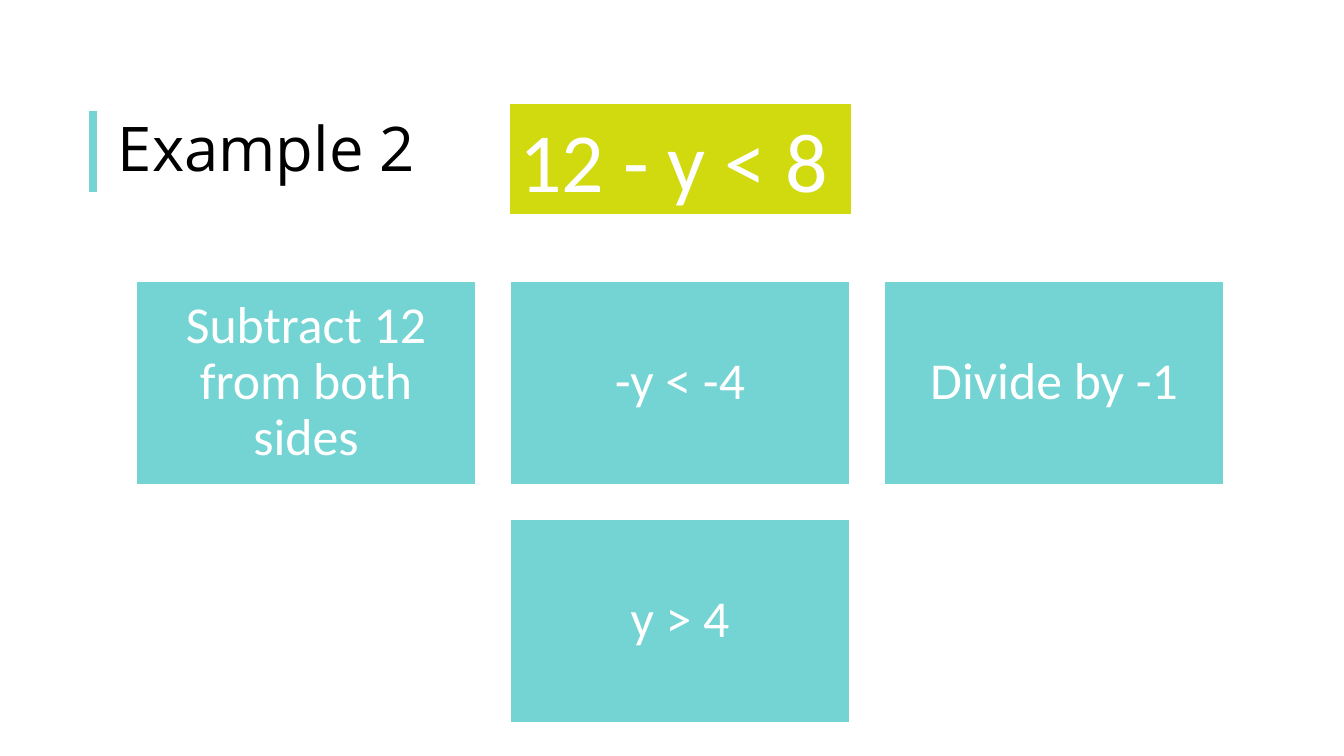
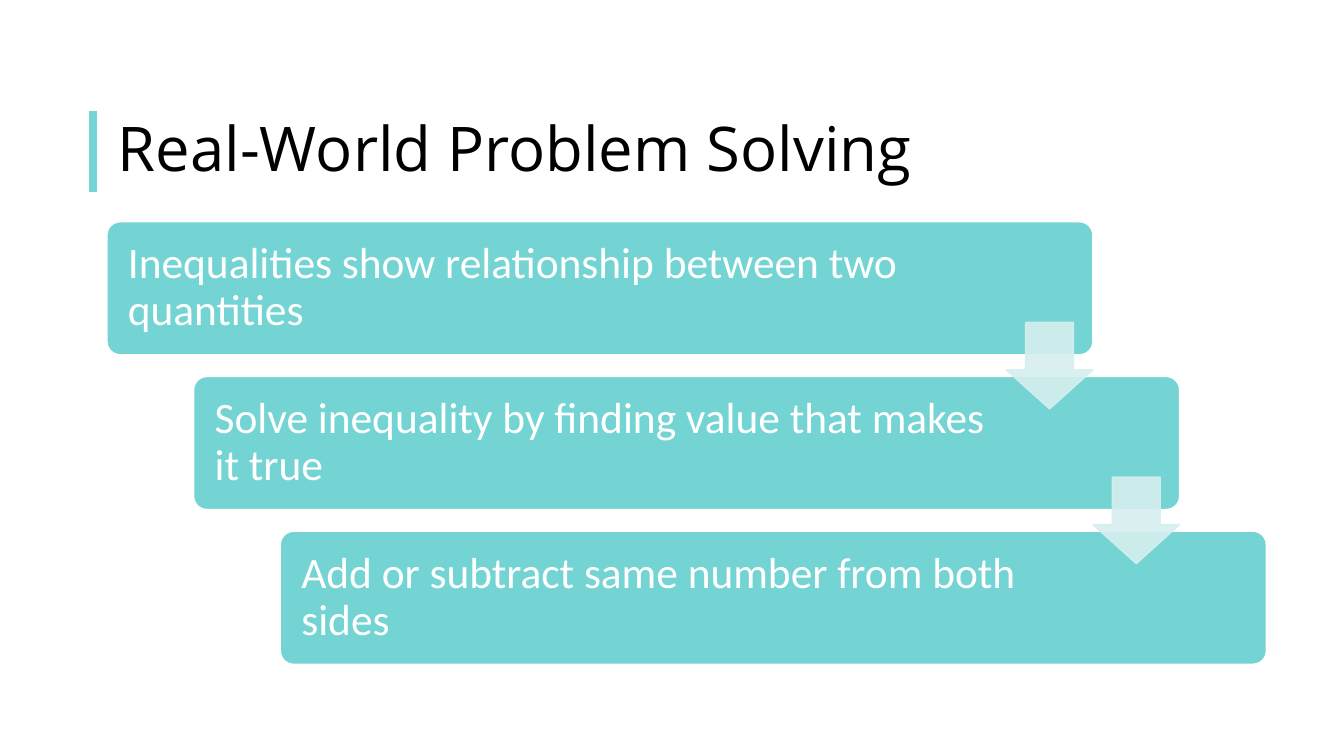
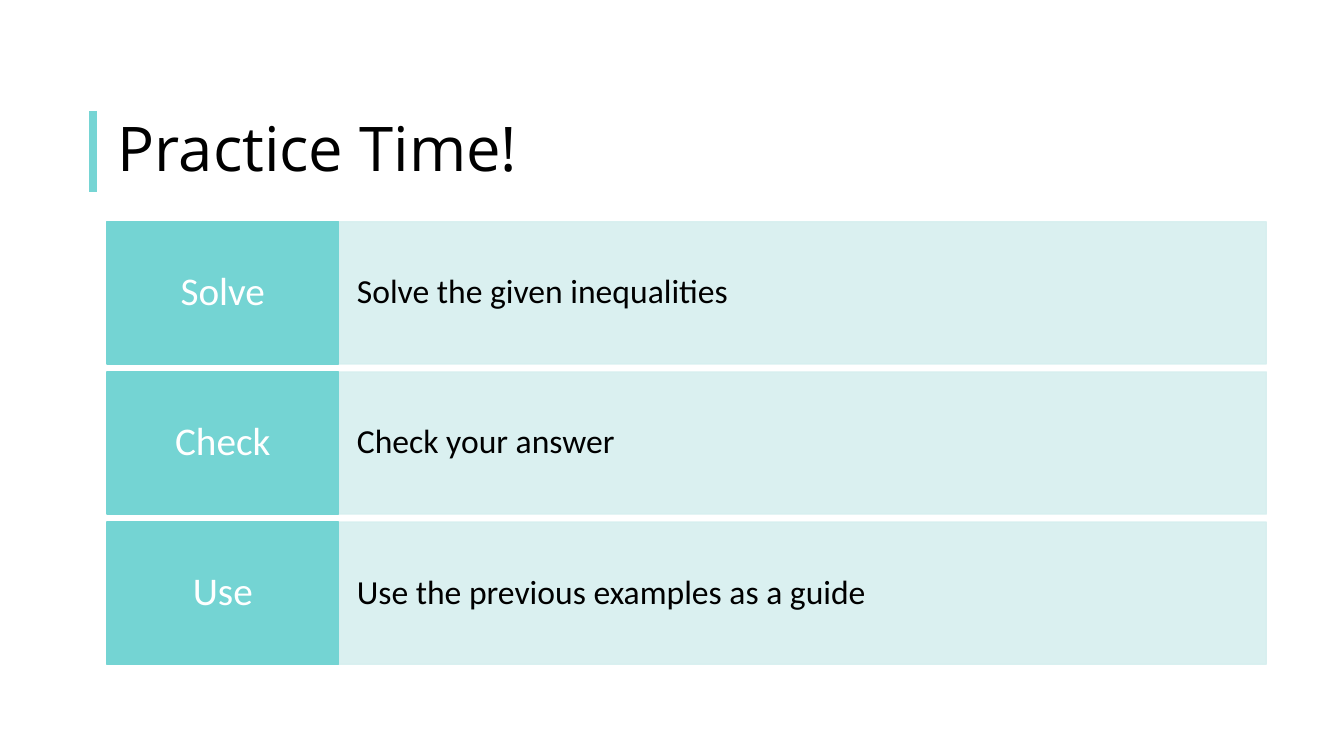
from dataclasses import dataclass

from lxml import etree
from pptx import Presentation
from pptx.dml.color import RGBColor
from pptx.enum.shapes import MSO_CONNECTOR, MSO_SHAPE
from pptx.enum.text import MSO_ANCHOR, PP_ALIGN
from pptx.oxml.ns import qn
from pptx.util import Inches, Pt

RECT = MSO_SHAPE.RECTANGLE
ROUNDED = MSO_SHAPE.ROUNDED_RECTANGLE
DOWN_ARROW = MSO_SHAPE.DOWN_ARROW
STRAIGHT = MSO_CONNECTOR.STRAIGHT
MIDDLE = MSO_ANCHOR.MIDDLE
LEFT = PP_ALIGN.LEFT
CENTER = PP_ALIGN.CENTER


@dataclass(frozen=True)
class Theme:
    white: str = "FFFFFF"
    black: str = "000000"
    title_bar: str = "76D5D4"
    teal: str = "74D4D3"
    pale_teal: str = "D6EFEF"
    lime: str = "D1DA0E"
    pale_opacity: int = 90
    title_font: str = "Open Sans"
    body_font: str = "Calibri"
    title_size: int = 44
    formula_size: int = 60
    step_size: int = 37
    stair_size: int = 31
    label_size: int = 28
    detail_size: int = 24


THEME = Theme()
CONTENT_LEFT, CONTENT_TOP = 1.06, 2.2
CONTENT_WIDTH, CONTENT_HEIGHT = 11.5, 4.39


def rgb(color):
    return RGBColor.from_string(color)


def set_opacity(fill_owner, percent):
    for color in fill_owner.iter(qn("a:srgbClr")):
        etree.SubElement(color, qn("a:alpha")).set("val", str(percent * 1000))


def write(box, text, size, color, font=THEME.body_font, align=LEFT,
          insets=(0.1, 0.05, 0.1, 0.05), spacing=0.9):
    frame = box.text_frame
    frame.word_wrap = True
    frame.vertical_anchor = MIDDLE
    (frame.margin_left, frame.margin_top,
     frame.margin_right, frame.margin_bottom) = map(Inches, insets)
    frame.text = text
    paragraph = frame.paragraphs[0]
    paragraph.alignment = align
    paragraph.line_spacing = spacing
    font_format = paragraph.runs[0].font
    font_format.name = font
    font_format.size = Pt(size)
    font_format.color.rgb = rgb(color)


def add_panel(slide, kind, bounds, fill, line, line_width=1,
              adjustments=(), opacity=None):
    panel = slide.shapes.add_shape(kind, *map(Inches, bounds))
    panel.shadow.inherit = False
    panel.fill.solid()
    panel.fill.fore_color.rgb = rgb(fill)
    panel.line.color.rgb = rgb(line)
    panel.line.width = Pt(line_width)
    for index, value in enumerate(adjustments):
        panel.adjustments[index] = value
    if opacity is not None:
        set_opacity(panel.fill._xPr, opacity)
    return panel


def add_titled_slide(deck, title):
    slide = deck.slides.add_slide(deck.slide_layouts[6])
    bar = slide.shapes.add_connector(
        STRAIGHT, Inches(0.92), Inches(1.1), Inches(0.92), Inches(1.9))
    bar.line.color.rgb = rgb(THEME.title_bar)
    bar.line.width = Pt(6)
    etree.SubElement(bar._element.spPr, qn("a:effectLst"))
    heading = slide.shapes.add_textbox(
        Inches(1.07), Inches(1.1), Inches(11.5), Inches(0.8))
    write(heading, title, THEME.title_size, THEME.black, THEME.title_font)
    return slide


def spread_tops(count, height):
    pitch = (CONTENT_HEIGHT - height) / (count - 1)
    return [CONTENT_TOP + index * pitch for index in range(count)]


def add_step_grid(slide, rows):
    left, top, width, height, gap = 1.35, 2.79, 3.37, 2.02, 0.34
    columns = max(map(len, rows))
    for row_index, steps in enumerate(rows):
        indent = (columns - len(steps)) * (width + gap) / 2
        for column, step in enumerate(steps):
            bounds = (left + indent + column * (width + gap),
                      top + row_index * (height + gap), width, height)
            card = add_panel(slide, RECT, bounds, THEME.teal, THEME.white, 1.5)
            write(card, step, THEME.step_size, THEME.white,
                  align=CENTER, insets=(0.15,) * 4)


def add_staircase(slide, steps):
    width, height, arrow_size = 9.78, 1.32, 0.86
    shift = (CONTENT_WIDTH - width) / (len(steps) - 1)
    tops = spread_tops(len(steps), height)
    lefts = [CONTENT_LEFT + index * shift for index in range(len(steps))]
    for left, top, (text, right_inset) in zip(lefts, tops, steps):
        stair = add_panel(slide, ROUNDED, (left, top, width, height),
                          THEME.teal, THEME.white, adjustments=(0.1,))
        write(stair, text, THEME.stair_size, THEME.white,
              insets=(0.17, 0.17, right_inset, 0.17))
    for left, top, next_top in zip(lefts, tops, tops[1:]):
        gap_center = (top + height + next_top) / 2
        bounds = (left + width - arrow_size, gap_center - arrow_size / 2,
                  arrow_size, arrow_size)
        add_panel(slide, DOWN_ARROW, bounds, THEME.pale_teal, THEME.pale_teal,
                  adjustments=(0.55, 0.45), opacity=THEME.pale_opacity)


def add_labelled_rows(slide, rows):
    label_width, height = 2.3, 1.41
    for top, (label, detail) in zip(spread_tops(len(rows), height), rows):
        detail_bounds = (CONTENT_LEFT + label_width, top,
                         CONTENT_WIDTH - label_width, height)
        detail_panel = add_panel(slide, RECT, detail_bounds, THEME.pale_teal,
                                 THEME.pale_teal, opacity=THEME.pale_opacity)
        write(detail_panel, detail, THEME.detail_size, THEME.black,
              insets=(0.18, 0.36, 0.18, 0.36))
        label_panel = add_panel(
            slide, RECT, (CONTENT_LEFT, top, label_width, height),
            THEME.teal, THEME.teal)
        write(label_panel, label, THEME.label_size, THEME.white,
              align=CENTER, insets=(0.12, 0.14, 0.12, 0.14))


def build_example(deck):
    slide = add_titled_slide(deck, "Example 2")
    add_step_grid(slide, [
        ["Subtract 12 from both sides", "-y < -4", "Divide by -1"],
        ["y > 4"],
    ])
    formula = add_panel(slide, RECT, (5.05, 1.02, 3.4, 1.11),
                        THEME.lime, THEME.white, 1.5)
    write(formula, "12 - y < 8", THEME.formula_size, THEME.white, spacing=1.0)


def build_problem_solving(deck):
    slide = add_titled_slide(deck, "Real-World Problem Solving")
    add_staircase(slide, [
        ("Inequalities show relationship between two quantities", 1.52),
        ("Solve inequality by finding value that makes it true", 1.89),
        ("Add or subtract same number from both sides", 1.89),
    ])


def build_practice(deck):
    slide = add_titled_slide(deck, "Practice Time!")
    add_labelled_rows(slide, [
        ("Solve", "Solve the given inequalities"),
        ("Check", "Check your answer"),
        ("Use", "Use the previous examples as a guide"),
    ])


def main():
    deck = Presentation()
    deck.slide_width = Inches(13.33)
    deck.slide_height = Inches(7.5)
    build_example(deck)
    build_problem_solving(deck)
    build_practice(deck)
    deck.save("out.pptx")


if __name__ == "__main__":
    main()
